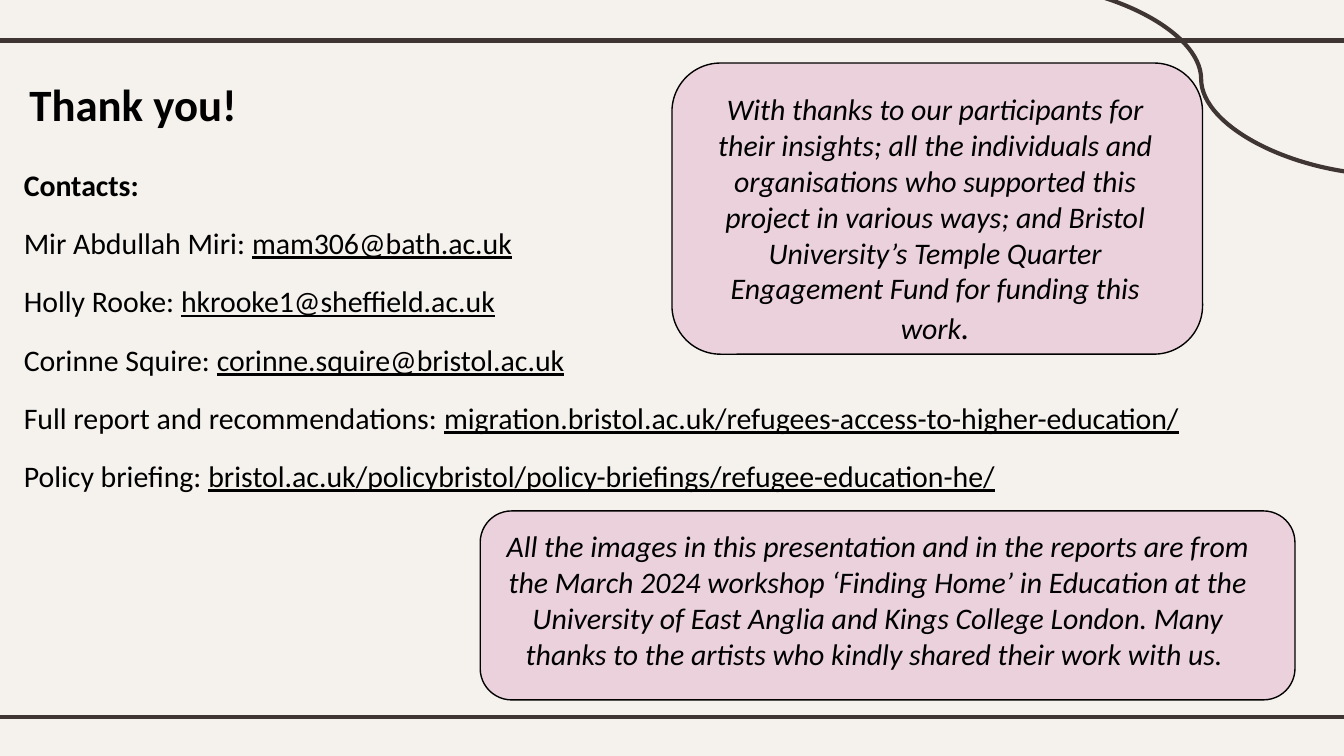
from dataclasses import dataclass

from pptx import Presentation
from pptx.dml.color import RGBColor
from pptx.enum.shapes import MSO_CONNECTOR, MSO_SHAPE
from pptx.enum.text import MSO_ANCHOR, MSO_AUTO_SIZE, PP_ALIGN
from pptx.oxml.ns import qn
from pptx.slide import Slide
from pptx.text.text import TextFrame
from pptx.util import Emu, Pt

PX = 9525
INSET = 10
FONT = "Calibri"
PAPER = RGBColor(0xF5, 0xF2, 0xEE)
BROWN = RGBColor(0x3F, 0x35, 0x33)
PINK = RGBColor(0xEA, 0xD1, 0xDC)
BLACK = RGBColor(0, 0, 0)


@dataclass(frozen=True)
class Box:
    left: int
    top: int
    width: int
    height: int

    def emu(self) -> list[Emu]:
        return [px(n) for n in (self.left, self.top, self.width, self.height)]


@dataclass(frozen=True)
class Run:
    text: str
    size: int = 16
    bold: bool = False
    slant: bool = False
    under: bool = False


@dataclass(frozen=True)
class Stroke:
    kind: MSO_CONNECTOR
    left: int
    top: int
    right: int
    bottom: int


@dataclass(frozen=True)
class Note:
    card: Box
    area: Box
    runs: list[Run]


@dataclass(frozen=True)
class Contact:
    label: str
    link: str


STROKES = [
    Stroke(MSO_CONNECTOR.STRAIGHT, -8, 29, 968, 29),
    Stroke(MSO_CONNECTOR.STRAIGHT, -8, 512, 968, 512),
    Stroke(MSO_CONNECTOR.CURVE, 723, -12, 993, 125),
]
CONTACTS = [
    Contact("Mir Abdullah Miri: ", "mam306@bath.ac.uk"),
    Contact("Holly Rooke: ", "hkrooke1@sheffield.ac.uk"),
    Contact("Corinne Squire: ", "corinne.squire@bristol.ac.uk"),
    Contact("Full report and recommendations: ",
            "migration.bristol.ac.uk/refugees-access-to-higher-education/"),
    Contact("Policy briefing: ",
            "bristol.ac.uk/policybristol/policy-briefings/refugee-education-he/"),
]
NOTES = [
    Note(Box(480, 45, 379, 208), Box(492, 55, 352, 219), [
        Run("With thanks to our participants for their insights; all the "
            "individuals and organisations who supported this project in "
            "various ways; and Bristol University’s Temple Quarter "
            "Engagement Fund for funding this work", slant=True),
        Run(".", size=18, slant=True),
    ]),
    Note(Box(343, 365, 582, 135), Box(345, 367, 564, 135), [
        Run("All the images in this presentation and in the reports are from "
            "the March 2024 workshop ‘Finding Home’ in Education at the "
            "University of East Anglia and Kings College London. Many "
            "thanks to the artists who kindly shared their work with us. ",
            slant=True),
    ]),
]


def px(count: int) -> Emu:
    return Emu(count * PX)


def write(frame: TextFrame, lines: list[list[Run]], align: PP_ALIGN) -> None:
    frame.word_wrap = True
    frame.auto_size = MSO_AUTO_SIZE.NONE
    frame.vertical_anchor = MSO_ANCHOR.TOP
    frame.margin_left = frame.margin_right = px(INSET)
    frame.margin_top = frame.margin_bottom = px(INSET)
    for index, line in enumerate(lines):
        para = frame.add_paragraph() if index else frame.paragraphs[0]
        para.alignment = align
        para.space_before = Pt(12 if index else 0)
        for item in line:
            run = para.add_run()
            run.text = item.text
            font = run.font
            font.name = FONT
            font.size = Pt(item.size)
            font.bold = item.bold
            font.italic = item.slant
            font.underline = item.under
            font.color.rgb = BLACK


def draw_stroke(slide: Slide, stroke: Stroke) -> None:
    line = slide.shapes.add_connector(
        stroke.kind, px(stroke.left), px(stroke.top),
        px(stroke.right), px(stroke.bottom))
    line.line.color.rgb = BROWN
    line.line.width = Pt(2.25)
    props = line._element.spPr
    props.append(props.makeelement(qn("a:effectLst"), {}))


def draw_text(slide: Slide, box: Box, lines: list[list[Run]],
              align: PP_ALIGN = PP_ALIGN.LEFT) -> None:
    write(slide.shapes.add_textbox(*box.emu()).text_frame, lines, align)


def draw_note(slide: Slide, note: Note) -> None:
    card = slide.shapes.add_shape(
        MSO_SHAPE.FLOWCHART_ALTERNATE_PROCESS, *note.card.emu())
    card.shadow.inherit = False
    card.fill.solid()
    card.fill.fore_color.rgb = PINK
    card.line.color.rgb = BLACK
    card.line.width = Pt(0.75)
    draw_text(slide, note.area, [note.runs], PP_ALIGN.CENTER)


def draw_title(slide: Slide) -> None:
    title = slide.shapes.title
    title.left, title.top, title.width, title.height = Box(11, 45, 495, 60).emu()
    write(title.text_frame, [[Run("Thank you!", size=24, bold=True)]],
          PP_ALIGN.LEFT)


def main() -> None:
    deck = Presentation()
    deck.slide_width, deck.slide_height = px(960), px(540)
    slide = deck.slides.add_slide(deck.slide_layouts[5])
    fill = slide.background.fill
    fill.solid()
    fill.fore_color.rgb = PAPER
    for stroke in STROKES:
        draw_stroke(slide, stroke)
    draw_title(slide)
    lines = [[Run("Contacts:", bold=True)]]
    lines += [[Run(c.label), Run(c.link, under=True)] for c in CONTACTS]
    draw_text(slide, Box(7, 109, 953, 219), lines)
    for note in NOTES:
        draw_note(slide, note)
    deck.save("out.pptx")


if __name__ == "__main__":
    main()
